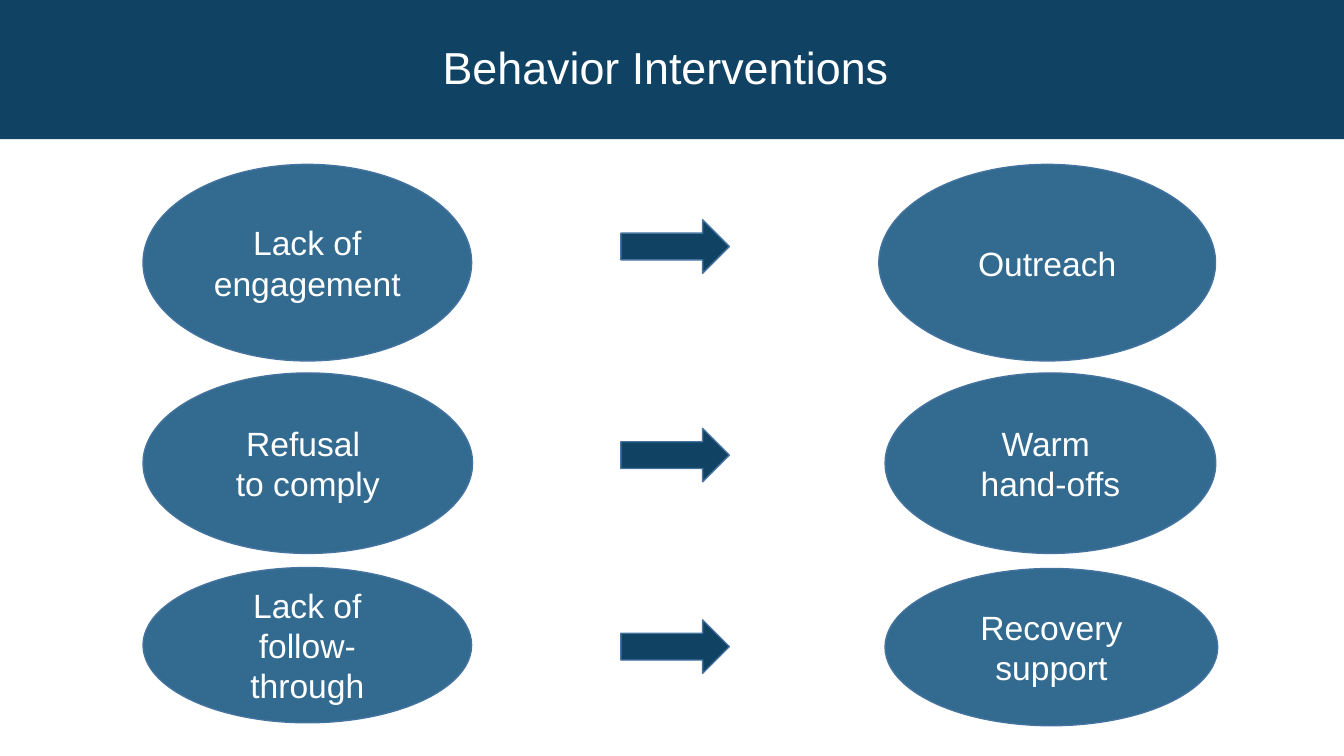
from dataclasses import dataclass

from pptx import Presentation
from pptx.dml.color import RGBColor
from pptx.enum.shapes import MSO_SHAPE
from pptx.enum.text import MSO_ANCHOR, PP_ALIGN
from pptx.util import Pt


@dataclass(frozen=True)
class Theme:
    """Colours, font and type sizes of the slide."""
    navy: RGBColor = RGBColor(0x0F, 0x42, 0x63)
    blue: RGBColor = RGBColor(0x33, 0x6B, 0x90)
    edge: RGBColor = RGBColor(0x43, 0x73, 0x9E)
    white: RGBColor = RGBColor(0xFF, 0xFF, 0xFF)
    font: str = "Arial"
    head: int = 32
    body: int = 24


THEME = Theme()

ROWS = [
    (("Lack of engagement", 102.2, 117.4, 234.7, 140.4),
     ("Outreach", 627.8, 117.4, 240.5, 140.4), 157),
    (("Refusal \nto comply", 102.2, 266.4, 235.4, 128.9),
     ("Warm \nhand-offs", 632.2, 266.4, 236.2, 128.9), 306),
    (("Lack of follow- through", 102.2, 405.4, 234.7, 110.9),
     ("Recovery support", 632.2, 406.1, 237.6, 112.3), 442.8),
]


def add_form(slide, kind, box, fill, edge=None):
    """Add a filled preset shape, outlined when an edge colour is given."""
    form = slide.shapes.add_shape(kind, *map(Pt, box))
    form.shadow.inherit = False
    form.fill.solid()
    form.fill.fore_color.rgb = fill
    if edge is None:
        form.line.fill.background()
    else:
        form.line.color.rgb = edge
        form.line.width = Pt(1)
    return form


def add_text(form, text, size, space=1.0):
    """Write centred white text into a shape, one run per line."""
    frame = form.text_frame
    frame.word_wrap = True
    frame.vertical_anchor = MSO_ANCHOR.MIDDLE
    para = frame.paragraphs[0]
    para.alignment = PP_ALIGN.CENTER
    para.line_spacing = space
    for i, line in enumerate(text.split("\n")):
        if i:
            para.add_line_break()
        run = para.add_run()
        run.text = line
        run.font.name = THEME.font
        run.font.size = Pt(size)
        run.font.color.rgb = THEME.white


def add_title(slide, text):
    """Add the title band across the top."""
    band = add_form(slide, MSO_SHAPE.RECTANGLE, (0, 0, 960, 99.4), THEME.navy)
    add_text(band, text, THEME.head, 0.9)


def add_oval(slide, text, *box):
    """Add a labelled oval."""
    oval = add_form(slide, MSO_SHAPE.FLOWCHART_CONNECTOR, box,
                    THEME.blue, THEME.edge)
    add_text(oval, text, THEME.body)


def add_arrow(slide, top):
    """Add the block arrow between the two ovals of a row."""
    add_form(slide, MSO_SHAPE.RIGHT_ARROW, (443.5, top, 77.5, 38.2),
             THEME.navy, THEME.edge)


def main():
    """Build and save the slide."""
    deck = Presentation()
    deck.slide_width, deck.slide_height = Pt(960), Pt(540)
    slide = deck.slides.add_slide(deck.slide_layouts[6])
    add_title(slide, "Behavior Interventions ")
    for cause, answer, top in ROWS:
        add_oval(slide, *cause)
        add_oval(slide, *answer)
        add_arrow(slide, top)
    deck.save("out.pptx")


if __name__ == "__main__":
    main()
